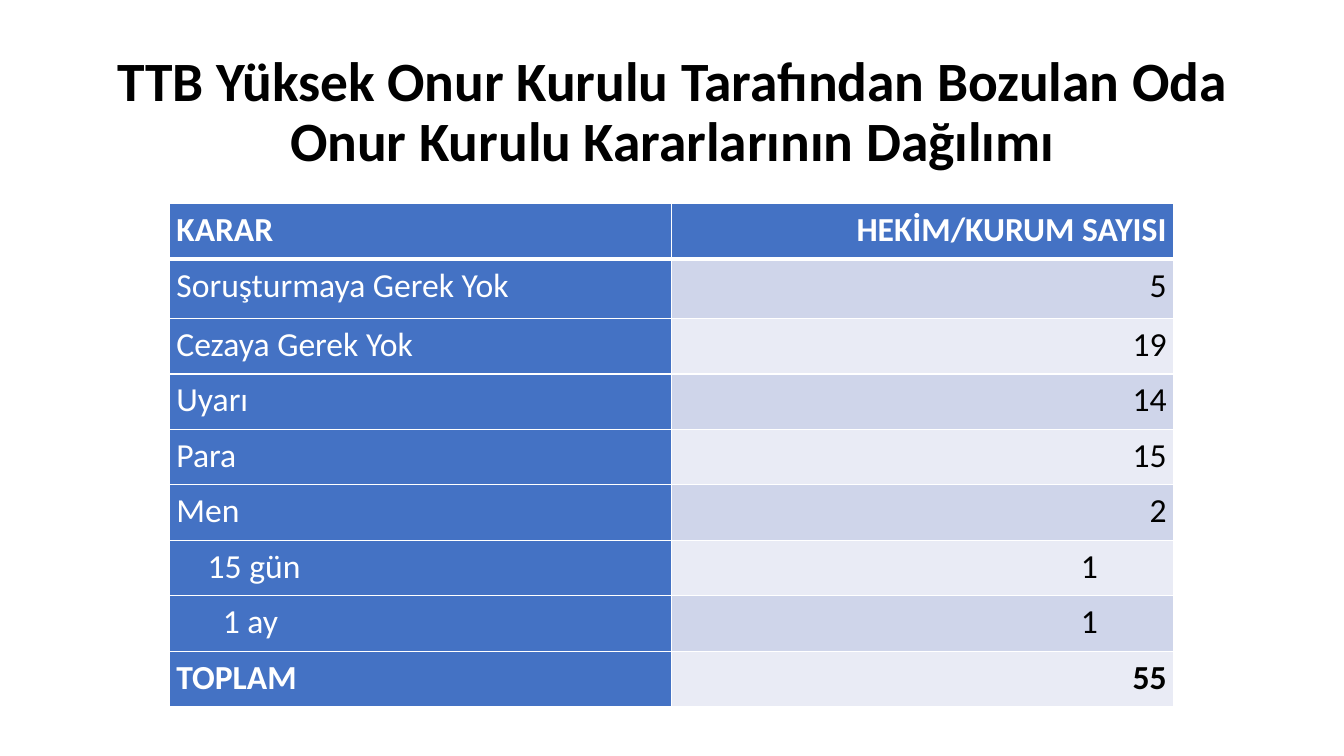
from lxml.etree import SubElement
from pptx import Presentation
from pptx.dml.color import RGBColor
from pptx.enum.text import MSO_ANCHOR as Anchor, PP_ALIGN as Align
from pptx.oxml.ns import qn
from pptx.util import Inches, Pt

# Content
TITLE = "TTB Yüksek Onur Kurulu Tarafından Bozulan Oda Onur Kurulu Kararlarının Dağılımı"
# decision, count, left indent, right indent (inches)
ROWS = [
    ("KARAR", "HEKİM/KURUM SAYISI", 0, 0),
    ("Soruşturmaya Gerek Yok", "5", 0, 0),
    ("Cezaya Gerek Yok", "19", 0, 0),
    ("Uyarı", "14", 0, 0),
    ("Para", "15", 0, 0),
    ("Men", "2", 0, 0),
    ("15 gün", "1", 0.31, 0.68),
    ("1 ay", "1", 0.46, 0.68),
    ("TOPLAM", "55", 0, 0),
]
COLORS = {"white": "FFFFFF", "black": "000000", "blue": "4472C4",
          "dark_band": "CFD5EA", "light_band": "E9EBF5"}
FONT = "Calibri"
COLUMN_WIDTH = 4.98
ROW_HEIGHT, FIRST_ROW_HEIGHT = 0.55, 0.59
CELL_MARGIN = 0.07
LAST = len(ROWS) - 1


def write(frame, text, color, font_format, para_format):
    para = frame.paragraphs[0]
    for name, value in para_format.items():
        setattr(para, name, value)
    span = para.add_run()
    span.text = text
    for name, value in {"name": FONT, **font_format}.items():
        setattr(span.font, name, value)
    span.font.color.rgb = RGBColor.from_string(COLORS[color])


def add_borders(cell, row):
    widths = {"L": 1, "R": 1, "T": 3 if row == 1 else 1, "B": 3 if row == 0 else 1}
    properties = cell._tc.get_or_add_tcPr()
    for position, (side, width) in enumerate(widths.items()):
        line = SubElement(properties, qn(f"a:ln{side}"), w=str(Pt(width)))
        fill = SubElement(line, qn("a:solidFill"))
        SubElement(fill, qn("a:srgbClr"), val=COLORS["white"])
        properties.insert(position, line)


deck = Presentation()
deck.slide_width, deck.slide_height = Inches(13.33), Inches(7.5)
page = deck.slides.add_slide(deck.slide_layouts[6])

# Title
box = page.shapes.add_textbox(Inches(0.92), Inches(0.4), Inches(11.5), Inches(1.45))
box.text_frame.word_wrap = True
box.text_frame.vertical_anchor = Anchor.MIDDLE
write(box.text_frame, TITLE, "black", {"size": Pt(39.6), "bold": True},
      {"alignment": Align.CENTER, "line_spacing": 0.9})

# Table of decisions
heights = [FIRST_ROW_HEIGHT if row == 1 else ROW_HEIGHT for row in range(len(ROWS))]
table = page.shapes.add_table(len(ROWS), 2, Inches(1.68), Inches(2.02),
                              Inches(2 * COLUMN_WIDTH), Inches(sum(heights))).table
for column in table.columns:
    column.width = Inches(COLUMN_WIDTH)

for row, (decision, count, left, right) in enumerate(ROWS):
    table.rows[row].height = Inches(heights[row])
    band = "dark_band" if row % 2 else "light_band"
    for column, text in enumerate((decision, count)):
        is_blue = row == 0 or column == 0
        cell = table.cell(row, column)
        margins = {"margin_left": CELL_MARGIN + (0 if column else left),
                   "margin_right": CELL_MARGIN + (right if column else 0),
                   "margin_top": 0, "margin_bottom": 0}
        for name, value in margins.items():
            setattr(cell, name, Inches(value))
        cell.fill.solid()
        cell.fill.fore_color.rgb = RGBColor.from_string(COLORS["blue" if is_blue else band])
        add_borders(cell, row)
        write(cell.text_frame, text, "white" if is_blue else "black",
              {"size": Pt(24), "bold": row in (0, LAST)},
              {"alignment": Align.RIGHT if column else Align.LEFT,
               "line_spacing": 1.15, "space_after": Pt(10)})

deck.save("out.pptx")
